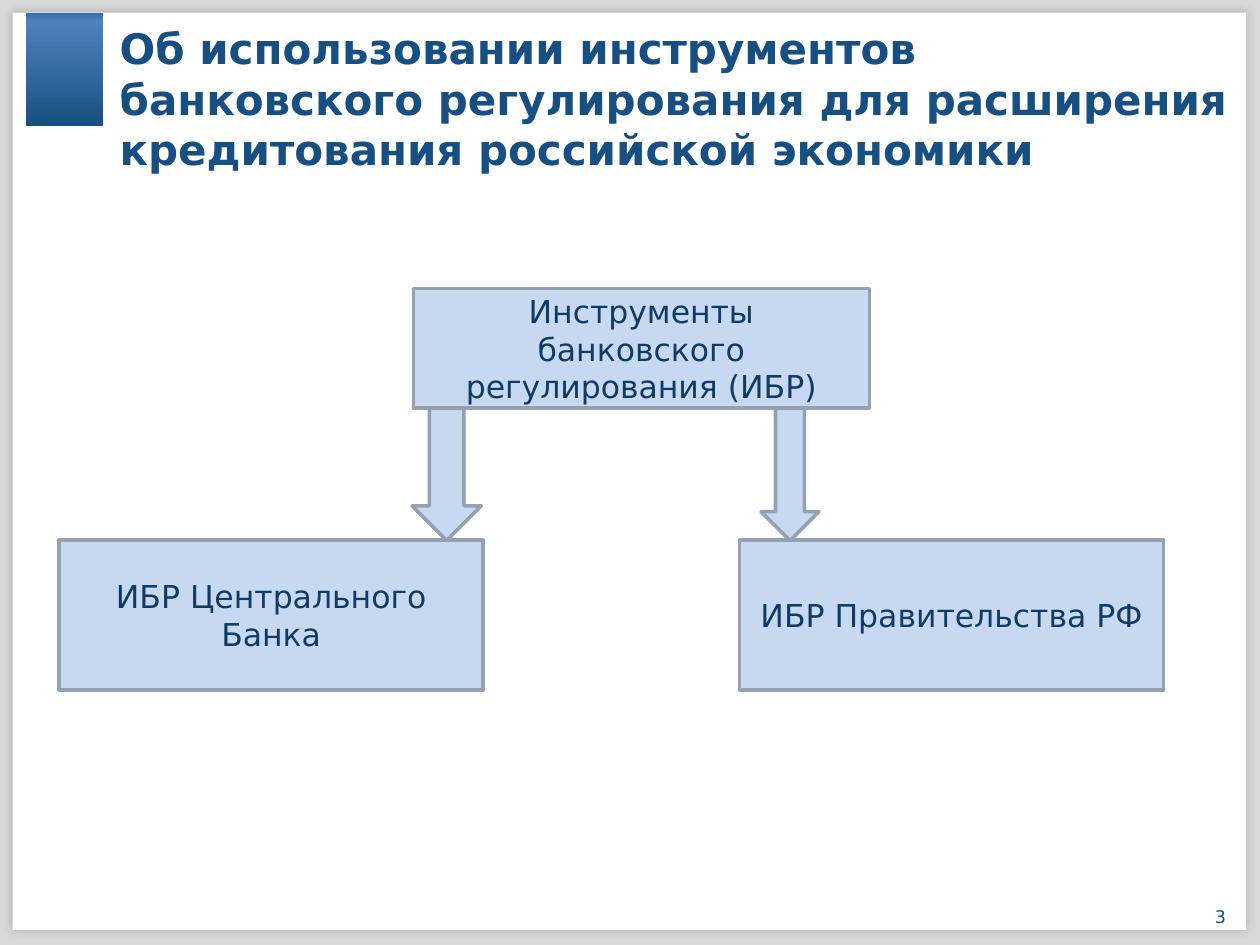
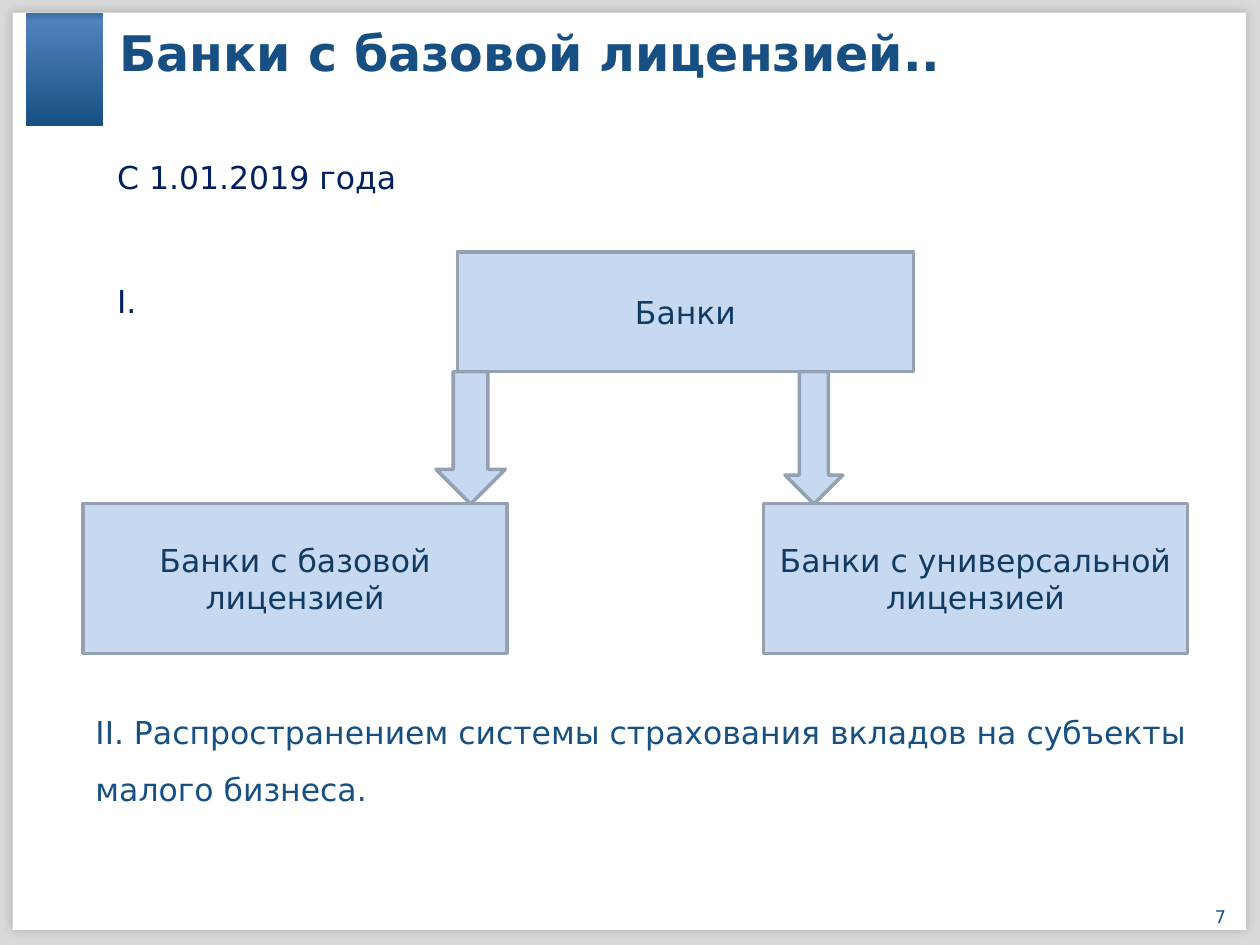
from dataclasses import dataclass

from lxml import etree
from pptx import Presentation
from pptx import util as u
from pptx.dml.color import RGBColor
from pptx.enum import shapes, text
from pptx.oxml import ns, parse_xml

COLORS = {
    "backdrop": "D9D9D9",
    "page": "FFFFFF",
    "shadow": "808080",
    "band_top": "346FA7",
    "band_light": "4F81BD",
    "band_bottom": "175082",
    "title": "174F82",
    "intro": "002060",
    "outro": "175082",
    "box": "C7D9F1",
    "box_line": "93A1B2",
    "box_text": "113B62",
}
FONT = "DejaVu Sans"
SLIDE_W, SLIDE_H = u.Inches(10), u.Inches(7.5)
COL, ROW = SLIDE_W / 100, SLIDE_H / 75
LEFT, CENTER = text.PP_ALIGN.LEFT, text.PP_ALIGN.CENTER
TOP, MIDDLE = text.MSO_ANCHOR.TOP, text.MSO_ANCHOR.MIDDLE
RECTANGLE, DOWN_ARROW = shapes.MSO_SHAPE.RECTANGLE, shapes.MSO_SHAPE.DOWN_ARROW


@dataclass
class Box:
    """An area measured in grid columns and rows."""
    left: float
    top: float
    width: float
    height: float

    def inner(self, left, top, width, height):
        """Return an area offset from this one's top left corner."""
        return Box(self.left + left, self.top + top, width, height)

    def emu(self):
        """Return left, top, width and height as lengths."""
        return (round(self.left * COL), round(self.top * ROW),
                round(self.width * COL), round(self.height * ROW))


SLIDE = Box(0, 0, 100, 75)


def rgb(name):
    """Look up a palette colour."""
    return RGBColor.from_string(COLORS[name])


def place(shape, box):
    """Move a placeholder to an area."""
    shape.left, shape.top, shape.width, shape.height = box.emu()


def write(frame, lines, size, color, align=LEFT, anchor=TOP, bold=False,
          spacing=None, gap=0):
    """Fill a text frame with evenly formatted paragraphs."""
    frame.word_wrap = True
    frame.auto_size = text.MSO_AUTO_SIZE.NONE
    frame.vertical_anchor = anchor
    frame.text = "\n".join(lines)
    for number, paragraph in enumerate(frame.paragraphs):
        properties = paragraph._p.get_or_add_pPr()
        properties.set("marL", "0")
        properties.set("indent", "0")
        paragraph.alignment = align
        paragraph.space_before = u.Pt(gap if number else 0)
        if spacing:
            paragraph.line_spacing = spacing
        etree.SubElement(properties, ns.qn("a:buNone"))
        font = paragraph.font
        font.name, font.size, font.bold = FONT, u.Pt(size), bold
        font.color.rgb = rgb(color)


def add_text(slide, box, lines, size, color, **style):
    """Add a text box."""
    write(slide.shapes.add_textbox(*box.emu()).text_frame, lines, size, color, **style)


def add_filled(slide, preset, box, color, line=None):
    """Add a flat preset shape, outlined if a line colour is given."""
    shape = slide.shapes.add_shape(preset, *box.emu())
    shape.shadow.inherit = False
    shape.fill.solid()
    shape.fill.fore_color.rgb = rgb(color)
    if line:
        shape.line.color.rgb = rgb(line)
        shape.line.width = u.Pt(2)
    else:
        shape.line.fill.background()
    return shape


def soften_edge(page):
    """Give the page panel a blurred shadow."""
    effects = page.element.spPr.find(ns.qn("a:effectLst"))
    effects.append(parse_xml(
        f'<a:outerShdw {ns.nsdecls("a")} blurRad="{u.Pt(5)}" dist="0" dir="0">'
        f'<a:srgbClr val="{COLORS["shadow"]}"><a:alpha val="46000"/></a:srgbClr>'
        '</a:outerShdw>'))


def shade_band(band):
    """Give the corner band its vertical three-stop gradient."""
    stops = ((0, "band_top"), (8, "band_light"), (100, "band_bottom"))
    stop_xml = "".join(
        f'<a:gs pos="{share * 1000}"><a:srgbClr val="{COLORS[name]}"/></a:gs>'
        for share, name in stops)
    properties = band.element.spPr
    solid = properties.find(ns.qn("a:solidFill"))
    properties.replace(solid, parse_xml(
        f'<a:gradFill {ns.nsdecls("a")}><a:gsLst>{stop_xml}</a:gsLst>'
        '<a:lin ang="5400000" scaled="0"/></a:gradFill>'))


def dress_master(master, slide):
    """Put the backdrop, page panel and corner band on the master."""
    master.background.fill.solid()
    master.background.fill.fore_color.rgb = rgb("backdrop")
    page = add_filled(slide, RECTANGLE, SLIDE.inner(1, 1, 97.9, 72.8), "page")
    soften_edge(page)
    band = add_filled(slide, RECTANGLE, SLIDE.inner(2.1, 1, 6.1, 9), "band_top")
    shade_band(band)
    tree = master.shapes[0].element.getparent()
    for number, panel in enumerate((page, band)):
        panel.element.nvSpPr.cNvPr.set("id", str(100 + number))
        tree.insert(2 + number, panel.element)


def add_heading(slide, title, size, rows, page_number):
    """Set the title and the page number."""
    heading = slide.shapes.title
    place(heading, SLIDE.inner(9.5, 1.8, 88.1, rows))
    frame = heading.text_frame
    frame.margin_left = frame.margin_top = frame.margin_right = frame.margin_bottom = 0
    write(frame, [title], size, "title", bold=True)
    add_text(slide, SLIDE.inner(94.8, 71.4, 4.1, 2.3), [str(page_number)], 10,
             "title", align=CENTER)


def add_split(slide, box, root_left, root, branches):
    """Draw a root box with arrows down to its two branches."""
    labels = [(root, box.inner(root_left, 0, 36.2, 9.5))]
    labels += [(branch, box.inner(54 * number, 19.95, 33.65, 11.9))
               for number, branch in enumerate(branches)]
    for label, area in labels:
        node = add_filled(slide, RECTANGLE, area, "box", "box_line")
        write(node.text_frame, [label], 18, "box_text", align=CENTER, anchor=MIDDLE)
    for left, width in ((28, 5.5), (55.7, 4.6)):
        add_filled(slide, DOWN_ARROW, box.inner(left, 9.5, width, 10.5), "box", "box_line")


def build_tools_slide(slide):
    """Show the two sources of regulation tools."""
    add_heading(slide, "Об использовании инструментов банковского регулирования "
                "для расширения кредитования российской экономики", 24, 14.6, 3)
    add_split(slide, SLIDE.inner(4.7, 22.9, 87.7, 31.8), 28.1,
              "Инструменты банковского регулирования (ИБР)",
              ("ИБР Центрального Банка", "ИБР Правительства РФ"))


def build_licence_slide(slide):
    """Show the two kinds of bank licence and the deposit insurance note."""
    add_heading(slide, "Банки с базовой лицензией..", 28, 8.2, 7)
    intro = slide.placeholders[1]
    place(intro, SLIDE.inner(8.3, 10.5, 82.9, 15.5))
    write(intro.text_frame, ["С 1.01.2019 года", "I."], 18, "intro",
          spacing=1.5, gap=39)
    add_split(slide, SLIDE.inner(6.6, 20, 87.6, 31.9), 29.7, "Банки",
              ("Банки с базовой лицензией", "Банки с универсальной лицензией"))
    add_text(slide, SLIDE.inner(6.6, 54.6, 90.3, 10.1),
             ["II. Распространением системы страхования вкладов на субъекты "
              "малого бизнеса."], 18, "outro", spacing=1.5)


def main():
    """Build and save the presentation."""
    deck = Presentation()
    deck.slide_width, deck.slide_height = SLIDE_W, SLIDE_H
    tools = deck.slides.add_slide(deck.slide_layouts[5])
    licences = deck.slides.add_slide(deck.slide_layouts[1])
    dress_master(deck.slide_master, tools)
    build_tools_slide(tools)
    build_licence_slide(licences)
    deck.save("out.pptx")


if __name__ == "__main__":
    main()
